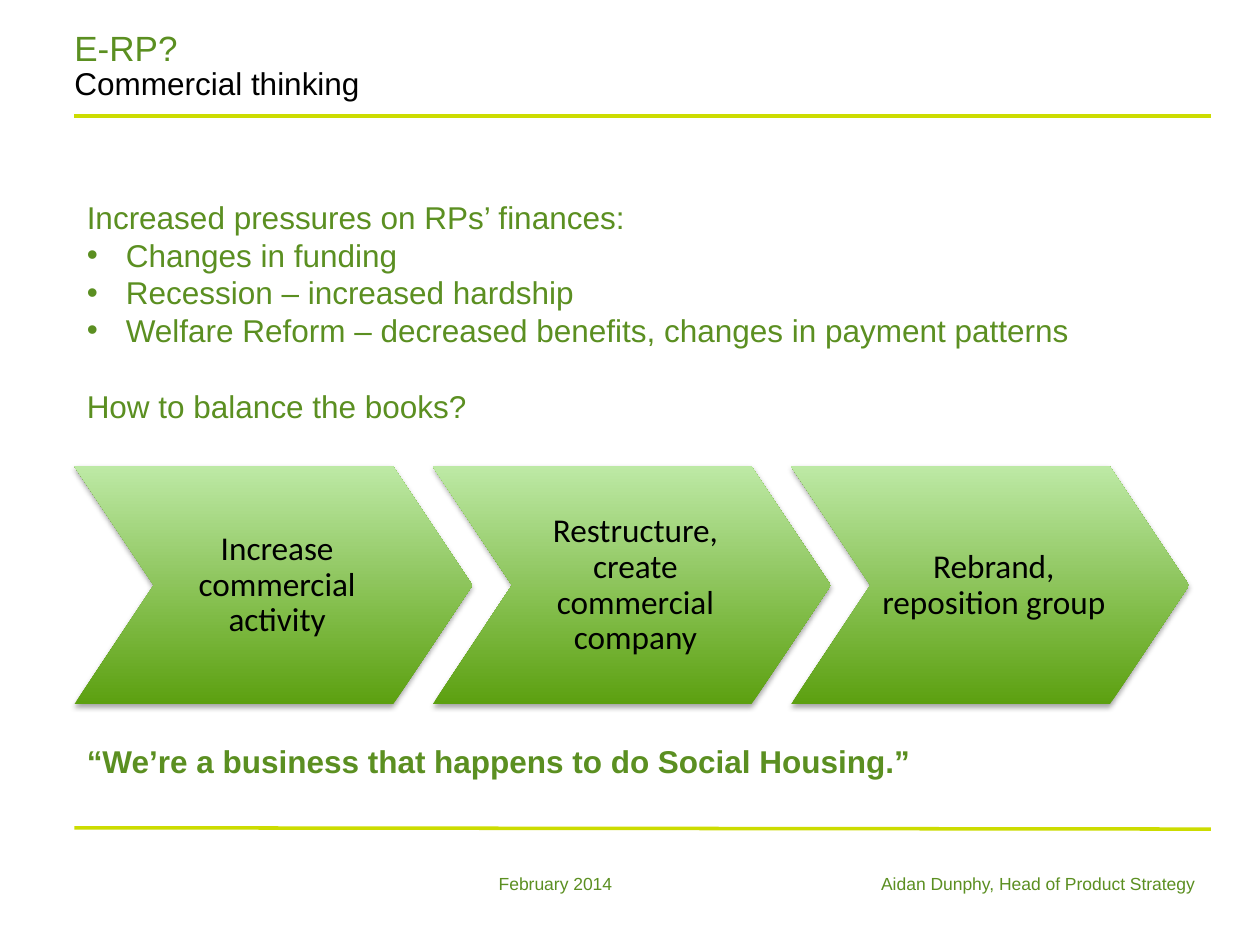
from dataclasses import dataclass

from lxml.etree import SubElement
from pptx import Presentation
from pptx.dml.color import RGBColor
from pptx.enum.shapes import MSO_CONNECTOR, MSO_SHAPE
from pptx.enum.text import MSO_ANCHOR, PP_ALIGN
from pptx.oxml.ns import qn
from pptx.util import Inches, Pt

WIDE, HIGH = 10, 7.5
LEFT, SPAN = 0.59, 8.99
STEP_W, STEP_H, STEP_TOP = 3.16, 1.89, 3.7
PITCH = 0.9 * STEP_W
LEAD = Pt(21.6)
HUES = {"green": "5B8F21", "lime": "CCDC00", "black": "000000",
        "dark": "5CA010", "light": "BDE9A5"}
STEPS = ["Increase commercial activity",
         "Restructure, create commercial company",
         "Rebrand, reposition group"]


@dataclass
class Line:
    text: str
    bullet: bool = False
    before: int = 0


@dataclass
class Block:
    lines: list[Line]
    left: float
    top: float
    width: float
    height: float
    size: int
    hue: str = "green"
    bold: bool = False
    align: PP_ALIGN = PP_ALIGN.LEFT
    pad: tuple = (0.1, 0.05, 0.1, 0.05)
    lead: int | None = None


BARE = (0, 0, 0, 0)
BLOCKS = [
    Block([Line("E-RP?")], LEFT, 0.21, 7.74, 0.46, 20, pad=BARE),
    Block([Line("Commercial thinking")], LEFT, 0.51, SPAN, 0.5, 18, "black", pad=BARE),
    Block([Line("February 2014")], 3.86, 6.88, 2.16, 0.25, 10),
    Block([Line("Aidan Dunphy, Head of Product Strategy")],
          6.34, 6.88, 3.24, 0.25, 10, align=PP_ALIGN.RIGHT),
    Block([Line("Increased pressures on RPs’ finances:"),
           Line("Changes in funding", True),
           Line("Recession – increased hardship", True),
           Line("Welfare Reform – decreased benefits, changes in payment patterns", True),
           Line("How to balance the books?", before=LEAD)],
          LEFT, 1.22, SPAN, 4.04, 18, pad=(0.1, 0.35, 0.1, 0.05), lead=LEAD),
    Block([Line("“We’re a business that happens to do Social Housing.”")],
          LEFT, 5.84, SPAN, 0.4, 18, bold=True, lead=LEAD),
]


def rgb(name: str) -> RGBColor:
    return RGBColor.from_string(HUES[name])


def set_pad(frame, pad: tuple) -> None:
    (frame.margin_left, frame.margin_top,
     frame.margin_right, frame.margin_bottom) = map(Inches, pad)
    frame.word_wrap = True


def set_font(para, face: str, size: int, hue: str, bold: bool = False) -> None:
    for run in para.runs:
        font = run.font
        font.name, font.size, font.bold = face, Pt(size), bold
        font.color.rgb = rgb(hue)


def add_bullet(para) -> None:
    props = para._p.get_or_add_pPr()
    props.set("marL", str(Inches(0.31)))
    props.set("indent", str(-Inches(0.31)))
    SubElement(props, qn("a:buFont"), typeface="Arial")
    SubElement(props, qn("a:buChar"), char="•")


def add_block(slide, block: Block) -> None:
    place = map(Inches, (block.left, block.top, block.width, block.height))
    frame = slide.shapes.add_textbox(*place).text_frame
    set_pad(frame, block.pad)
    frame.text = "\n".join(line.text for line in block.lines)
    for para, line in zip(frame.paragraphs, block.lines):
        if line.bullet:
            add_bullet(para)
        para.alignment = block.align
        if block.lead:
            para.line_spacing = block.lead
        if line.before:
            para.space_before = line.before
        set_font(para, "Arial", block.size, block.hue, block.bold)


def add_rule(slide, start: float, end: float) -> None:
    rule = slide.shapes.add_connector(
        MSO_CONNECTOR.STRAIGHT, Inches(LEFT), Inches(start), Inches(9.61), Inches(end))
    rule.line.color.rgb = rgb("lime")
    rule.line.width = Pt(2)
    SubElement(rule._element.spPr, qn("a:effectLst"))


def add_shade(shape) -> None:
    """Give the shape a soft shadow straight below it."""
    shape.shadow.inherit = False
    effects = shape._element.spPr.find(qn("a:effectLst"))
    shade = SubElement(effects, qn("a:outerShdw"), blurRad=str(Pt(3.1)),
                       dist=str(Pt(1.8)), dir="5400000", rotWithShape="0")
    tint = SubElement(shade, qn("a:srgbClr"), val=HUES["black"])
    SubElement(tint, qn("a:alpha"), val="35000")


def add_step(slide, col: int, text: str) -> None:
    place = map(Inches, (LEFT + col * PITCH, STEP_TOP, STEP_W, STEP_H))
    step = slide.shapes.add_shape(MSO_SHAPE.CHEVRON, *place)
    step.adjustments[0] = 1 / 3
    step.fill.gradient()
    step.fill.gradient_angle = 90
    for stop, hue in zip(step.fill.gradient_stops, ("dark", "light")):
        stop.color.rgb = rgb(hue)
    step.line.fill.background()
    add_shade(step)
    frame = step.text_frame
    set_pad(frame, (0.09, 0.03, 0.03, 0.03))
    frame.vertical_anchor = MSO_ANCHOR.MIDDLE
    frame.text = text
    para = frame.paragraphs[0]
    para.alignment = PP_ALIGN.CENTER
    para.line_spacing = 0.9
    set_font(para, "Calibri", 19, "black")


def main() -> None:
    deck = Presentation()
    deck.slide_width, deck.slide_height = Inches(WIDE), Inches(HIGH)
    slide = deck.slides.add_slide(deck.slide_layouts[6])
    add_rule(slide, 0.92, 0.92)
    add_rule(slide, 6.57, 6.58)
    for block in BLOCKS:
        add_block(slide, block)
    for col, text in enumerate(STEPS):
        add_step(slide, col, text)
    deck.save("out.pptx")


if __name__ == "__main__":
    main()
